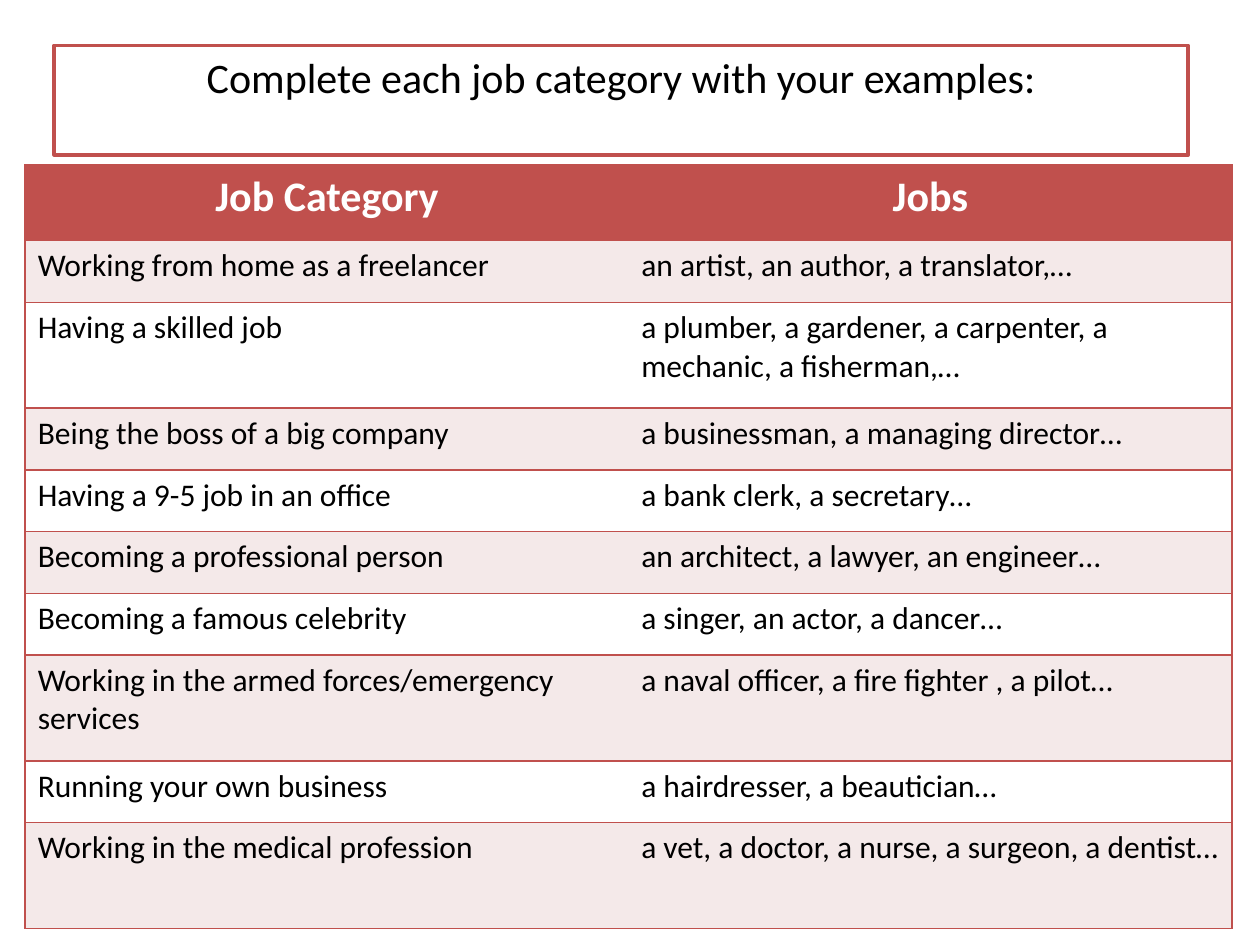
from lxml import etree
from pptx import Presentation
from pptx.dml.color import RGBColor
from pptx.enum.text import MSO_ANCHOR, MSO_AUTO_SIZE, PP_ALIGN
from pptx.oxml.ns import qn
from pptx.util import Inches, Pt

RED = RGBColor(0xC0, 0x50, 0x4D)
PINK = RGBColor(0xF4, 0xE9, 0xE9)
WHITE = RGBColor(0xFF, 0xFF, 0xFF)
BLACK = RGBColor(0x00, 0x00, 0x00)

HEADINGS = ("Job Category", "Jobs")
JOBS = [
    ("Working from home as a freelancer", "an artist, an author, a translator,…"),
    ("Having a skilled job",
     "a plumber, a gardener, a carpenter, a mechanic, a fisherman,…"),
    ("Being the boss of a big company", "a businessman, a managing director…"),
    ("Having a 9-5 job in an office", "a bank clerk, a secretary…"),
    ("Becoming a professional person", "an architect, a lawyer, an engineer…"),
    ("Becoming a famous celebrity", "a singer, an actor, a dancer…"),
    ("Working in the armed forces/emergency services",
     "a naval officer, a fire fighter , a pilot…"),
    ("Running your own business", "a hairdresser, a beautician…"),
    ("Working in the medical profession",
     "a vet, a doctor, a nurse, a surgeon, a dentist…"),
]
HEADER_HEIGHT, ROW_HEIGHT, TALL_HEIGHT = 0.6, 0.49, 0.84
TALL_ROWS = (2, 7, 9)


class SlideBuilder:
    font = "Calibri"
    border_width = Pt(1)

    def __init__(self, prs):
        self.slide = prs.slides.add_slide(prs.slide_layouts[5])

    def set_text(self, tf, text, size, color, bold=False, align=PP_ALIGN.LEFT):
        tf.text = text
        p = tf.paragraphs[0]
        p.alignment = align
        font = p.runs[0].font
        font.name, font.size, font.bold = self.font, Pt(size), bold
        font.color.rgb = color

    def title(self, text, left, top, width, height):
        sp = self.slide.shapes.title
        sp.left, sp.top = Inches(left), Inches(top)
        sp.width, sp.height = Inches(width), Inches(height)
        sp.fill.solid()
        sp.fill.fore_color.rgb = WHITE
        sp.line.color.rgb = RED
        sp.line.width = Pt(2)
        tf = sp.text_frame
        tf.word_wrap = True
        tf.auto_size = MSO_AUTO_SIZE.NONE
        tf.vertical_anchor = MSO_ANCHOR.TOP
        self.set_text(tf, text, 24, BLACK, align=PP_ALIGN.CENTER)

    def borders(self, cell, sides):
        """Draw the given sides (letters from LRTB) and clear the others."""
        tc_pr = cell._tc.get_or_add_tcPr()
        for side in "LRTB":
            ln = etree.SubElement(tc_pr, qn(f"a:ln{side}"), w=str(self.border_width))
            if side in sides:
                fill = etree.SubElement(ln, qn("a:solidFill"))
                etree.SubElement(fill, qn("a:srgbClr"), val=str(RED))
            else:
                etree.SubElement(ln, qn("a:noFill"))

    def table(self, rows, heights, left, top, width):
        cols = len(rows[0])
        table = self.slide.shapes.add_table(
            len(rows), cols, Inches(left), Inches(top),
            Inches(width), Inches(sum(heights))).table
        table.horz_banding = False
        for col in table.columns:
            col.width = Inches(width / cols)
        for i, (texts, height) in enumerate(zip(rows, heights)):
            table.rows[i].height = Inches(height)
            for j, text in enumerate(texts):
                cell = table.cell(i, j)
                self.borders(cell, "LTB" if j == 0 else "RTB")
                cell.fill.solid()
                if i == 0:
                    cell.fill.fore_color.rgb = RED
                    self.set_text(cell.text_frame, text, 24, WHITE, True,
                                  PP_ALIGN.CENTER)
                else:
                    cell.fill.fore_color.rgb = PINK if i % 2 else WHITE
                    self.set_text(cell.text_frame, text, 18, BLACK)


def main():
    prs = Presentation()
    prs.slide_width, prs.slide_height = Inches(10), Inches(7.5)
    builder = SlideBuilder(prs)
    builder.title("Complete each job category with your examples:", 0.43, 0.36, 9, 0.87)
    heights = [HEADER_HEIGHT] + [TALL_HEIGHT if i in TALL_ROWS else ROW_HEIGHT
                                 for i in range(1, len(JOBS) + 1)]
    builder.table([HEADINGS, *JOBS], heights, 0.2, 1.31, 9.58)
    prs.save("out.pptx")


if __name__ == "__main__":
    main()
